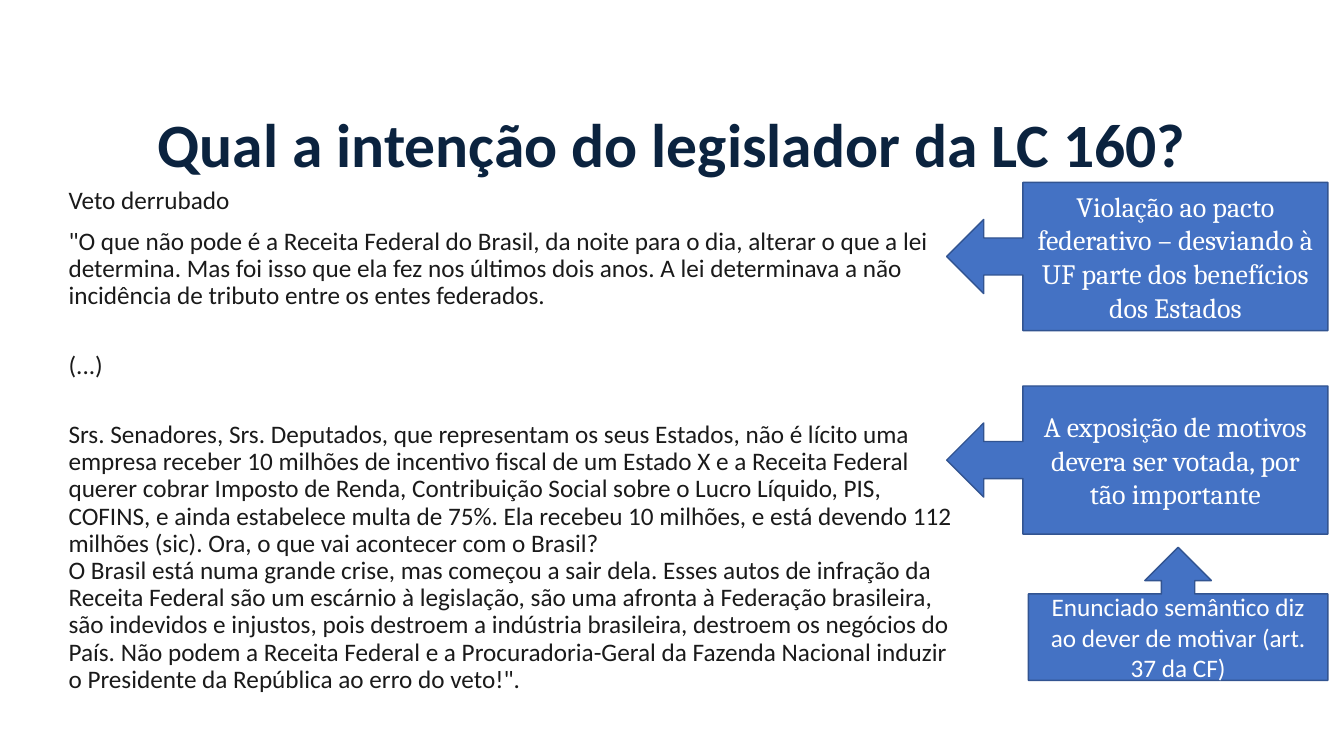
from lxml.etree import SubElement
from pptx import Presentation
from pptx.dml.color import RGBColor
from pptx.enum.shapes import MSO_SHAPE as Kind
from pptx.enum.text import MSO_ANCHOR as Anchor, MSO_AUTO_SIZE as Fit, PP_ALIGN as Align
from pptx.oxml.ns import qn
from pptx.util import Inches, Pt

WIDE, HIGH = Inches(13.33), Inches(7.5)
NAVY, INK, BLUE, EDGE, WHITE = "0B233F", "1A1A1A", "4472C4", "325491", "FFFFFF"

TITLE = "Qual a intenção do legislador da LC 160?"
SPEECH = [
    (0, "Veto derrubado"),
    (10, '"O que não pode é a Receita Federal do Brasil, da noite para o dia, alterar o que a lei determina. '
         "Mas foi isso que ela fez nos últimos dois anos. A lei determinava a não incidência de tributo "
         "entre os entes federados."),
    (30, "(...)"),
    (30, "Srs. Senadores, Srs. Deputados, que representam os seus Estados, não é lícito uma empresa receber "
         "10 milhões de incentivo fiscal de um Estado X e a Receita Federal querer cobrar Imposto de Renda, "
         "Contribuição Social sobre o Lucro Líquido, PIS, COFINS, e ainda estabelece multa de 75%. Ela recebeu "
         "10 milhões, e está devendo 112 milhões (sic). Ora, o que vai acontecer com o Brasil?"),
    (0, "O Brasil está numa grande crise, mas começou a sair dela. Esses autos de infração da Receita Federal "
        "são um escárnio à legislação, são uma afronta à Federação brasileira, são indevidos e injustos, pois "
        "destroem a indústria brasileira, destroem os negócios do País. Não podem a Receita Federal e a "
        'Procuradoria-Geral da Fazenda Nacional induzir o Presidente da República ao erro do veto!".'),
]
SIDE = [
    "Violação ao pacto federativo – desviando à UF parte dos benefícios dos Estados",
    "A exposição de motivos devera ser votada, por tão importante",
]
DUTY = "Enunciado semântico diz ao dever de motivar (art. 37 da CF)"


def color(code):
    return RGBColor.from_string(code)


def area(left, top, width, height):
    return [int(size * share / 100) for size, share in
            ((WIDE, left), (HIGH, top), (WIDE, width), (HIGH, height))]


def move(shape, box):
    shape.left, shape.top, shape.width, shape.height = box


def style(para, size, code, name="Calibri", bold=False):
    font = para.font
    font.size, font.name, font.bold = Pt(size), name, bold
    font.color.rgb = color(code)


def head(shape, box):
    move(shape, box)
    frame = shape.text_frame
    frame.text = TITLE
    frame.auto_size = Fit.NONE
    frame.vertical_anchor = Anchor.MIDDLE
    para = frame.paragraphs[0]
    para.alignment = Align.CENTER
    para.line_spacing = 0.9
    style(para, 44, NAVY, bold=True)


def body(shape, box):
    move(shape, box)
    frame = shape.text_frame
    frame.text = "\n".join(text for _, text in SPEECH)
    frame.auto_size = Fit.NONE
    for para, (gap, _) in zip(frame.paragraphs, SPEECH):
        props = para._p.get_or_add_pPr()
        props.set("marL", "0")
        props.set("indent", "0")
        SubElement(props, qn("a:buNone"))
        para.line_spacing = 0.9
        para.space_before = Pt(gap)
        style(para, 18, INK)


def callout(slide, kind, box, text, size, name, depth):
    shape = slide.shapes.add_shape(kind, *box)
    shape.shadow.inherit = False
    shape.adjustments[3] = depth
    shape.fill.solid()
    shape.fill.fore_color.rgb = color(BLUE)
    shape.line.color.rgb = color(EDGE)
    shape.line.width = Pt(1)
    frame = shape.text_frame
    frame.text = text
    frame.word_wrap = True
    frame.vertical_anchor = Anchor.MIDDLE
    para = frame.paragraphs[0]
    para.alignment = Align.CENTER
    style(para, size, WHITE, name)


def main():
    deck = Presentation()
    deck.slide_width, deck.slide_height = WIDE, HIGH
    slide = deck.slides.add_slide(deck.slide_layouts[1])
    head(slide.shapes.title, area(6.9, 9.87, 86.27, 19.33))
    body(slide.placeholders[1], area(4.35, 24.13, 67.67, 71.87))
    for row, text in enumerate(SIDE):
        box = area(70.44, 24.13 + 26.93 * row, 28.36, 19.6)
        callout(slide, Kind.LEFT_ARROW_CALLOUT, box, text, 20, "Cambria", 0.8)
    box = area(76.52, 72.4, 22.28, 17.6)
    callout(slide, Kind.UP_ARROW_CALLOUT, box, DUTY, 18, "Calibri", 0.65)
    deck.save("out.pptx")


if __name__ == "__main__":
    main()
